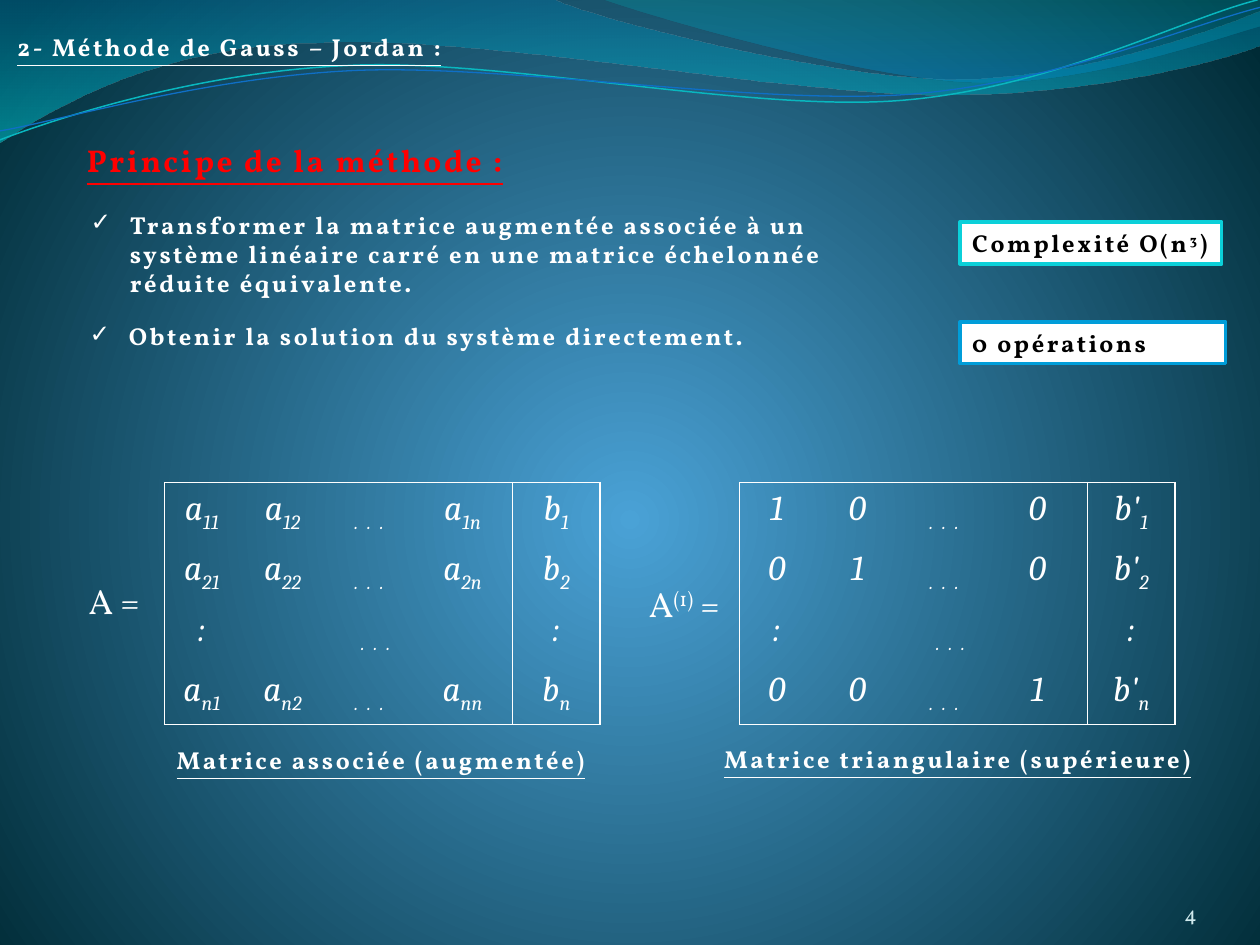
from lxml import etree
from pptx import Presentation
from pptx.dml.color import RGBColor
from pptx.enum.shapes import MSO_SHAPE
from pptx.enum.text import MSO_ANCHOR, PP_ALIGN
from pptx.oxml.ns import qn
from pptx.util import Cm, Pt

RECTANGLE = MSO_SHAPE.RECTANGLE
MIDDLE, BOTTOM = MSO_ANCHOR.MIDDLE, MSO_ANCHOR.BOTTOM
LEFT, CENTER, RIGHT = PP_ALIGN.LEFT, PP_ALIGN.CENTER, PP_ALIGN.RIGHT

WHITE = RGBColor(0xFF, 0xFF, 0xFF)
BLACK = RGBColor(0x00, 0x00, 0x00)
RED = RGBColor(0xFF, 0x00, 0x00)
PALE = RGBColor(0xD1, 0xEA, 0xED)
GLOW = RGBColor(0x4A, 0xA2, 0xD6)
NIGHT = RGBColor(0x00, 0x2B, 0x36)
SEA = RGBColor(0x00, 0x74, 0xA0)
TURQUOISE = RGBColor(0x00, 0xC4, 0xCD)
AZURE = RGBColor(0x00, 0x8A, 0xBF)
TEAL = RGBColor(0x00, 0xA0, 0xA8)
CYAN_STRAND = RGBColor(0x09, 0xB7, 0xBF)
BLUE_STRAND = RGBColor(0x0F, 0x6F, 0xC6)
BLUE_EDGE = RGBColor(0x00, 0x9D, 0xD9)
CYAN_EDGE = RGBColor(0x0B, 0xD0, 0xD9)

BODY_FONT, MATH_FONT = "Vollkorn", "Cambria"
TRACKING = 1.46
COLUMN_WIDTHS = (1.5, 1.75, 1.75, 2.01, 1.77)
DOTS = "_. . ."

BROAD_WAVE = [[(0, 0)], [(11.18, 0)], [(12.09, 0.43), (16.87, 1.6), (19.25, 1.6)],
              [(21.67, 1.6), (24.33, 0.66), (25.4, 0.23)], [(25.4, 0.91)],
              [(24.97, 1.12), (22.1, 1.93), (18.95, 1.91)],
              [(15.8, 1.91), (9.7, 0.71), (6.53, 0.86)],
              [(3.28, 0.89), (1.17, 2.11), (0, 2.87)]]
CORNER_WAVE = [[(12.17, 0)], [(12.93, 0.28), (17.32, 1.57), (19.53, 1.65)],
               [(21.74, 1.75), (24.41, 0.81), (25.4, 0.53)], [(25.4, 0)]]
CYAN_CURVE = [[(0, 2.82)], [(1.22, 2.36), (4.01, 1.45), (7.04, 1.32)],
              [(10.03, 1.17), (15.06, 2.26), (18.11, 2.03)],
              [(21.16, 1.8), (23.83, 0.38), (25.35, 0)]]
BLUE_CURVE = [[(0, 2.64)], [(1.19, 2.44), (4.17, 1.55), (7.19, 1.42)],
              [(10.24, 1.3), (15.16, 2.11), (18.21, 1.91)],
              [(21.23, 1.7), (23.9, 0.53), (25.4, 0.15)]]

AUGMENTED = [["a_11", "a_12", DOTS, "a_1n", "b_1"],
             ["a_21", "a_22", DOTS, "a_2n", "b_2"],
             [":", DOTS, "", "", ":"],
             ["a_n1", "a_n2", DOTS, "a_nn", "b_n"]]
REDUCED = [["1", "0", DOTS, "0", "b'_1"],
           ["0", "1", DOTS, "0", "b'_2"],
           [":", DOTS, "", "", ":"],
           ["0", "0", DOTS, "1", "b'_n"]]


def write(paragraph, parts, size, color, font=BODY_FONT, bold=False,
          italic=False, underline=False, spacing=0):
    for text, baseline in parts:
        run = paragraph.add_run()
        run.text = text
        run.font.size, run.font.name = Pt(size), font
        run.font.bold, run.font.italic, run.font.underline = bold, italic, underline
        run.font.color.rgb = color
        properties = run.font._element
        if baseline:
            properties.set("baseline", str(baseline * 1000))
        if spacing:
            properties.set("spc", str(round(spacing * 100)))


def add_label(slide, box, parts, size=14, color=WHITE, **style):
    label = slide.shapes.add_textbox(*map(Cm, box))
    label.text_frame.word_wrap = True
    write(label.text_frame.paragraphs[0], parts, size, color, **style)
    return label


def add_heading(slide, box, text, size=14, color=WHITE):
    add_label(slide, box, [(text, 0)], size, color,
              bold=True, underline=True, spacing=TRACKING)


def add_point(slide, box, text):
    point = add_label(slide, box, [(text, 0)], bold=True, spacing=TRACKING)
    properties = point.text_frame.paragraphs[0]._p.get_or_add_pPr()
    properties.set("marL", str(Cm(0.79)))
    properties.set("indent", str(Cm(-0.79)))
    tint = etree.SubElement(properties, qn("a:buClr"))
    etree.SubElement(tint, qn("a:srgbClr"), val=str(WHITE))
    etree.SubElement(properties, qn("a:buFont"), typeface=BODY_FONT)
    etree.SubElement(properties, qn("a:buChar"), char="✓")


def add_callout(slide, box, parts, edge):
    callout = slide.shapes.add_shape(RECTANGLE, *map(Cm, box))
    callout.shadow.inherit = False
    callout.fill.solid()
    callout.fill.fore_color.rgb = WHITE
    callout.line.color.rgb = edge
    callout.line.width = Pt(2)
    frame = callout.text_frame
    frame.word_wrap = True
    frame.margin_right = 0
    frame.vertical_anchor = MIDDLE
    frame.paragraphs[0].alignment = LEFT
    write(frame.paragraphs[0], parts, 14, BLACK, bold=True, spacing=TRACKING)


def add_page_number(slide, box, number):
    label = add_label(slide, box, [(number, 0)], 12, PALE)
    frame = label.text_frame
    frame.margin_left = frame.margin_right = frame.margin_top = frame.margin_bottom = 0
    frame.vertical_anchor = BOTTOM
    frame.paragraphs[0].alignment = RIGHT


def set_gradient(fill, stops):
    fill.gradient()
    for stop, (position, color, opacity) in zip(fill.gradient_stops, stops):
        stop.position = position
        stop.color.rgb = color
        if opacity < 100:
            tint = stop._gs.find(qn("a:srgbClr"))
            etree.SubElement(tint, qn("a:alpha"), val=str(opacity * 1000))


def paint_background(slide):
    set_gradient(slide.background.fill, [(0, GLOW, 100), (1, NIGHT, 100)])
    gradient = slide.element.find(".//" + qn("a:gradFill"))
    gradient.remove(gradient.find(qn("a:lin")))
    circle = etree.SubElement(gradient, qn("a:path"), path="circle")
    etree.SubElement(circle, qn("a:fillToRect"), l="50000", t="55000", r="50000", b="45000")


def bend(outline, segments):
    lines = iter(list(outline.element.iter(qn("a:lnTo"))))
    for segment in segments:
        steps = [next(lines) for _ in segment]
        if len(steps) == 3:
            curve = etree.Element(qn("a:cubicBezTo"))
            steps[0].addprevious(curve)
            for step in steps:
                curve.append(step[0])
                step.getparent().remove(step)


def add_outline(slide, segments, closed):
    start, *others = [(Cm(x), Cm(y)) for segment in segments for x, y in segment]
    builder = slide.shapes.build_freeform(*start)
    builder.add_line_segments(others, close=closed)
    outline = builder.convert_to_shape()
    outline.shadow.inherit = False
    bend(outline, segments[1:])
    return outline


def add_waves(slide):
    for segments, stops, angle in (
            (BROAD_WAVE, [(0, SEA, 45), (1, TURQUOISE, 55)], 270),
            (CORNER_WAVE, [(0.2, AZURE, 45), (1, TEAL, 30)], 90)):
        wave = add_outline(slide, segments, True)
        set_gradient(wave.fill, stops)
        wave.fill.gradient_angle = angle
        wave.line.fill.background()
    for segments, color, width in ((CYAN_CURVE, CYAN_STRAND, 0.85),
                                   (BLUE_CURVE, BLUE_STRAND, 0.75)):
        strand = add_outline(slide, segments, False)
        strand.fill.background()
        strand.line.color.rgb = color
        strand.line.width = Pt(width)


def set_borders(cell, edges):
    properties = cell._tc.get_or_add_tcPr()
    for index, (side, visible) in enumerate(edges.items()):
        border = etree.Element(qn("a:ln" + side), w=str(Pt(0.96)))
        if visible:
            paint = etree.SubElement(border, qn("a:solidFill"))
            etree.SubElement(paint, qn("a:srgbClr"), val=str(WHITE))
        else:
            etree.SubElement(border, qn("a:noFill"))
        properties.insert(index, border)


def add_matrix(slide, box, entries):
    last = len(entries) - 1
    matrix = slide.shapes.add_table(len(entries), len(COLUMN_WIDTHS), *map(Cm, box)).table
    matrix.first_row = matrix.horz_banding = False
    for column, width in zip(matrix.columns, COLUMN_WIDTHS):
        column.width = Cm(width)
    matrix.cell(2, 1).merge(matrix.cell(2, 3))
    for r, row in enumerate(entries):
        for c, entry in enumerate(row):
            cell = matrix.cell(r, c)
            cell.fill.background()
            set_borders(cell, {"L": c in (0, 4), "R": c >= 3 or cell.is_merge_origin,
                               "T": r == 0, "B": r == last})
            paragraph = cell.text_frame.paragraphs[0]
            paragraph.alignment = CENTER
            symbol, _, index = entry.partition("_")
            parts = [part for part in ((symbol, 0), (index, -25)) if part[0]]
            write(paragraph, parts, 20, WHITE, MATH_FONT, italic=True,
                  spacing=1.3 if entry == DOTS else 0)


def main():
    deck = Presentation()
    deck.slide_width, deck.slide_height = Cm(25.4), Cm(19.05)
    slide = deck.slides.add_slide(deck.slide_layouts[6])
    paint_background(slide)
    add_waves(slide)
    add_heading(slide, (0.1, 0.53, 9.35, 0.84), "2- Méthode de Gauss – Jordan :")
    add_heading(slide, (1.5, 2.72, 10.21, 1.02), "Principe de la méthode :", 18, RED)
    add_point(slide, (1.58, 4.1, 17.04, 2.06),
              "Transformer la matrice augmentée associée à un système linéaire carré "
              "en une matrice échelonnée réduite équivalente.")
    add_point(slide, (1.56, 6.35, 15.34, 0.84), "Obtenir la solution du système directement.")
    add_callout(slide, (19.35, 4.48, 5.28, 0.84),
                [("Complexité O(n", 0), ("3", 30), (")", 0)], CYAN_EDGE)
    add_callout(slide, (19.35, 6.49, 5.36, 0.84), [("0 opérations", 0)], BLUE_EDGE)
    add_label(slide, (1.54, 11.56, 1.78, 1.09), [("A =", 0)], 20)
    add_label(slide, (12.83, 11.61, 2.08, 1.09), [("A", 0), ("(1)", 30), (" =", 0)], 20)
    add_matrix(slide, (3.32, 9.73, 8.78, 4.87), AUGMENTED)
    add_matrix(slide, (14.91, 9.73, 8.78, 4.87), REDUCED)
    add_heading(slide, (3.31, 14.9, 8.86, 1.42), "Matrice associée (augmentée)")
    add_heading(slide, (14.35, 14.88, 10.06, 0.84), "Matrice triangulaire (supérieure)")
    add_page_number(slide, (22.02, 17.65, 2.11, 1.02), "4")
    deck.save("out.pptx")


if __name__ == "__main__":
    main()
